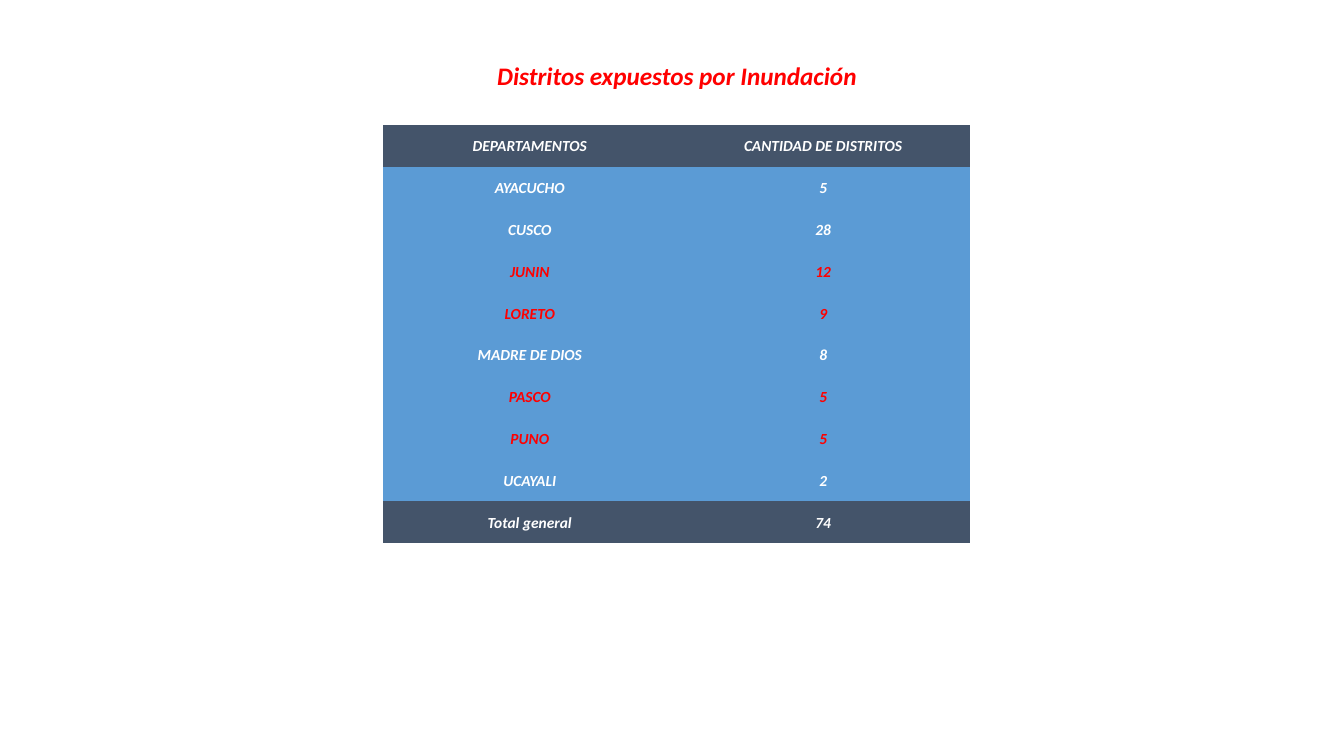
from dataclasses import dataclass

from pptx import Presentation
from pptx.dml.color import RGBColor
from pptx.enum.text import MSO_ANCHOR, MSO_AUTO_SIZE, PP_ALIGN
from pptx.oxml.ns import qn
from pptx.slide import Slide
from pptx.text.text import TextFrame
from pptx.util import Emu, Pt

CENTER = PP_ALIGN.CENTER
MIDDLE = MSO_ANCHOR.MIDDLE
FIT_SHAPE = MSO_AUTO_SIZE.SHAPE_TO_FIT_TEXT

EMU_PER_PX = 9144
FONT = "Calibri"
WHITE, RED, SLATE, BLUE = "FFFFFF", "FF0000", "44546A", "5B9BD5"
NO_STYLE_NO_GRID = "{2D5ABB26-0587-4C30-8999-92F81FD0307C}"


@dataclass(frozen=True)
class Row:
    department: str
    districts: str
    color: str = WHITE
    fill: str = BLUE


ROWS = [
    Row("DEPARTAMENTOS", "CANTIDAD DE DISTRITOS", fill=SLATE),
    Row("AYACUCHO", "5"),
    Row("CUSCO", "28"),
    Row("JUNIN", "12", RED),
    Row("LORETO", "9", RED),
    Row("MADRE DE DIOS", "8"),
    Row("PASCO", "5", RED),
    Row("PUNO", "5", RED),
    Row("UCAYALI", "2"),
    Row("Total general", "74", fill=SLATE),
]


def px(n: int) -> Emu:
    return Emu(n * EMU_PER_PX)


def rgb(color: str) -> RGBColor:
    return RGBColor.from_string(color)


def write(tf: TextFrame, text: str, *, size: int, color: str) -> None:
    p = tf.paragraphs[0]
    p.alignment = CENTER
    r = p.add_run()
    r.text = text
    r.font.name = FONT
    r.font.size = Pt(size)
    r.font.bold = r.font.italic = True
    r.font.color.rgb = rgb(color)


def add_title(s: Slide, text: str) -> None:
    tf = s.shapes.add_textbox(px(481), px(55), px(381), px(40)).text_frame
    tf.word_wrap = False
    tf.auto_size = FIT_SHAPE
    write(tf, text, size=18, color=RED)


def add_district_table(s: Slide, rows: list[Row]) -> None:
    frame = s.shapes.add_table(len(rows), 2, px(380), px(124), px(582), px(415))
    table = frame.table
    table.first_row = table.horz_banding = False
    for style_id in table._tbl.iter(qn("a:tableStyleId")):
        style_id.text = NO_STYLE_NO_GRID
    for i, row in enumerate(rows):
        for j, text in enumerate((row.department, row.districts)):
            cell = table.cell(i, j)
            cell.fill.solid()
            cell.fill.fore_color.rgb = rgb(row.fill)
            cell.vertical_anchor = MIDDLE
            cell.margin_left = cell.margin_right = cell.margin_top = px(1)
            cell.margin_bottom = 0
            write(cell.text_frame, text, size=11, color=row.color)


def main() -> None:
    """Build the slide of districts exposed to flooding."""
    prs = Presentation()
    prs.slide_width, prs.slide_height = px(1333), px(750)
    s = prs.slides.add_slide(prs.slide_layouts[6])
    add_title(s, "Distritos expuestos por Inundación")
    add_district_table(s, ROWS)
    prs.save("out.pptx")


if __name__ == "__main__":
    main()
